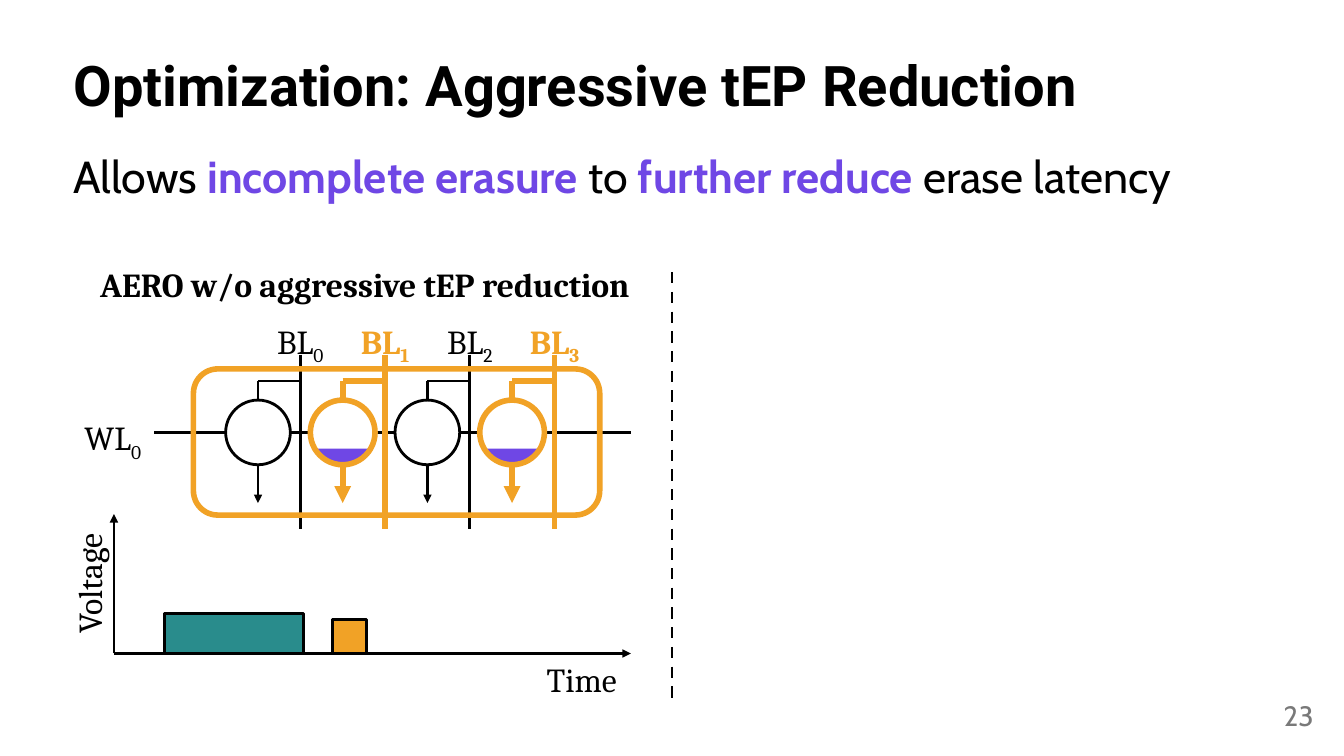
from math import acos, cos, pi, sin

from lxml.etree import SubElement
from pptx import Presentation
from pptx.dml.color import RGBColor
from pptx.enum.dml import MSO_LINE
from pptx.enum.shapes import MSO_CONNECTOR, MSO_SHAPE
from pptx.enum.text import MSO_ANCHOR, PP_ALIGN
from pptx.oxml.ns import qn
from pptx.util import Pt

COLORS = {
    "black": "000000",
    "white": "FFFFFF",
    "gray": "797979",
    "purple": "6F47E5",
    "orange": "F1A226",
    "teal": "298C8C",
}
THIN, THICK = 2, 4


def rgb(name):
    return RGBColor.from_string(COLORS[name])


def add_text(slide, box, runs, font="Cambria", size=24, color="black", bold=False,
             align=PP_ALIGN.LEFT, anchor=MSO_ANCHOR.MIDDLE, wrap=False,
             line_spacing=None, rotation=0):
    """Add a text box; each run is a string or a (string, overrides) pair."""
    shape = slide.shapes.add_textbox(*map(Pt, box))
    shape.rotation = rotation
    frame = shape.text_frame
    frame.word_wrap = wrap
    frame.vertical_anchor = anchor
    paragraph = frame.paragraphs[0]
    paragraph.alignment = align
    paragraph.line_spacing = line_spacing
    for item in [runs] if isinstance(runs, str) else runs:
        text, overrides = (item, {}) if isinstance(item, str) else item
        run = paragraph.add_run()
        run.text = text
        run.font.name = font
        run.font.size = Pt(size)
        run.font.bold = overrides.get("bold", bold)
        run.font.color.rgb = rgb(overrides.get("color", color))
        if overrides.get("subscript"):
            run._r.get_or_add_rPr().set("baseline", "-25000")


def add_line(slide, start, end, color="black", width=THIN, arrow=False, dashed=False):
    line = slide.shapes.add_connector(MSO_CONNECTOR.STRAIGHT, *map(Pt, (*start, *end)))
    line.line.color.rgb = rgb(color)
    line.line.width = Pt(width)
    if dashed:
        line.line.dash_style = MSO_LINE.DASH
    if arrow:
        SubElement(line.line._get_or_add_ln(), qn("a:tailEnd"), type="triangle")
    SubElement(line._element.spPr, qn("a:effectLst"))


def paint(shape, fill=None, line=None, width=THIN):
    shape.shadow.inherit = False
    if fill:
        shape.fill.solid()
        shape.fill.fore_color.rgb = rgb(fill)
    else:
        shape.fill.background()
    if line:
        shape.line.color.rgb = rgb(line)
        shape.line.width = Pt(width)
    else:
        shape.line.fill.background()


def add_shape(slide, kind, box, **style):
    paint(slide.shapes.add_shape(kind, *map(Pt, box)), **style)


def add_residue(slide, center_x, center_y, radius, depth):
    """Fill the part of a circle that lies more than depth below its center."""
    half_angle, steps = acos(depth / radius), 24
    angles = [pi / 2 + half_angle * (2 * step / steps - 1) for step in range(steps + 1)]
    points = [(Pt(center_x + radius * cos(angle)), Pt(center_y + radius * sin(angle)))
              for angle in angles]
    builder = slide.shapes.build_freeform(*points[0], scale=1.0)
    builder.add_line_segments(points[1:], close=True)
    paint(builder.convert_to_shape(), fill="purple")


def add_cell_array(slide, left, top, width, height):
    """Draw a word line with four cells, every second one incompletely erased."""
    pitch, radius, bit_line_offset = 60.5, 23.1, 30.3
    word_line_y = top + 83.5
    hook_y = top + 46.8
    stem_end = top + 133.9
    centers = [left + 135.3 + pitch * index for index in range(4)]
    incomplete = centers[1::2]

    def circle(x):
        return x - radius, word_line_y - radius, 2 * radius, 2 * radius

    add_line(slide, (left + 61.2, word_line_y), (left + width, word_line_y))
    add_text(slide, (left, top + 69.1, 59, 36), ["WL", ("0", {"subscript": True})],
             align=PP_ALIGN.RIGHT, anchor=MSO_ANCHOR.TOP)

    for index, x in enumerate(centers):
        selected = x in incomplete
        color, line_width = ("orange", THICK) if selected else ("black", THIN)
        bit_line_x = x + bit_line_offset
        add_line(slide, (x, hook_y), (x, stem_end), color, line_width, arrow=True)
        add_shape(slide, MSO_SHAPE.OVAL, circle(x), fill="white", line="black")
        add_text(slide, (bit_line_x - 26, top, 52, 36),
                 ["BL", (str(index), {"subscript": True})], color=color, bold=selected,
                 align=PP_ALIGN.CENTER, anchor=MSO_ANCHOR.TOP)
        add_line(slide, (bit_line_x, top + 28), (bit_line_x, top + height), color, line_width)
        add_line(slide, (x, hook_y), (bit_line_x, hook_y), color, line_width)

    add_shape(slide, MSO_SHAPE.ROUNDED_RECTANGLE, (left + 89.2, top + 38.1, 290.2, 104.4),
              line="orange", width=THICK)
    for x in incomplete:
        add_residue(slide, x, word_line_y, radius, 11.5)
        add_shape(slide, MSO_SHAPE.OVAL, circle(x), line="orange", width=THICK)


def add_voltage_chart(slide, left, top, width, height):
    """Draw the erase pulses over time as a schematic."""
    bottom = top + height
    add_line(slide, (left, bottom), (left, top), arrow=True)
    for offset, pulse_width, pulse_height, color in [(36, 99.4, 28.4, "teal"),
                                                     (156.2, 24.5, 24.2, "orange")]:
        add_shape(slide, MSO_SHAPE.RECTANGLE,
                  (left + offset, bottom - pulse_height, pulse_width, pulse_height),
                  fill=color, line="black")
    add_text(slide, (left - 63.4, top + height / 2 - 18, 90.8, 36), "Voltage",
             align=PP_ALIGN.CENTER, rotation=270)
    add_text(slide, (left + width - 69, bottom, 67.6, 36), "Time", align=PP_ALIGN.CENTER)
    add_line(slide, (left, bottom), (left + width, bottom), arrow=True)


def add_heading(slide, left, top, width):
    add_text(slide, (left, top, width, 104.4), "Optimization: Aggressive tEP Reduction",
             font="Roboto", size=40, bold=True, wrap=True, line_spacing=0.9)
    emphasis = {"color": "purple", "bold": True}
    add_text(slide, (left, top + 96.5, width, 60),
             ["Allows ", ("incomplete erasure ", emphasis), "to ",
              ("further reduce ", emphasis), "erase latency"],
             font="Cabin", size=32, anchor=MSO_ANCHOR.TOP, wrap=True, line_spacing=0.9)


def add_baseline_panel(slide, left, top, width):
    add_text(slide, (left + 8.6, top, 406, 36), "AERO w/o aggressive tEP reduction",
             bold=True, align=PP_ALIGN.CENTER)
    add_cell_array(slide, left, top + 40.4, width, 152.6)
    add_voltage_chart(slide, left + 32.4, top + 182.2, width - 32.4, 99.6)


def main():
    presentation = Presentation()
    presentation.slide_width, presentation.slide_height = Pt(960), Pt(540)
    slide = presentation.slides.add_slide(presentation.slide_layouts[6])
    add_heading(slide, 45.4, 10.8, 870)
    add_text(slide, (729.4, 496.8, 216, 28.8), "23", font="Cabin", size=20, color="gray",
             align=PP_ALIGN.RIGHT, wrap=True)
    add_line(slide, (480, 194.4), (480, 500.4), dashed=True)
    add_baseline_panel(slide, 49, 185, 401.7)
    presentation.save("out.pptx")


if __name__ == "__main__":
    main()
